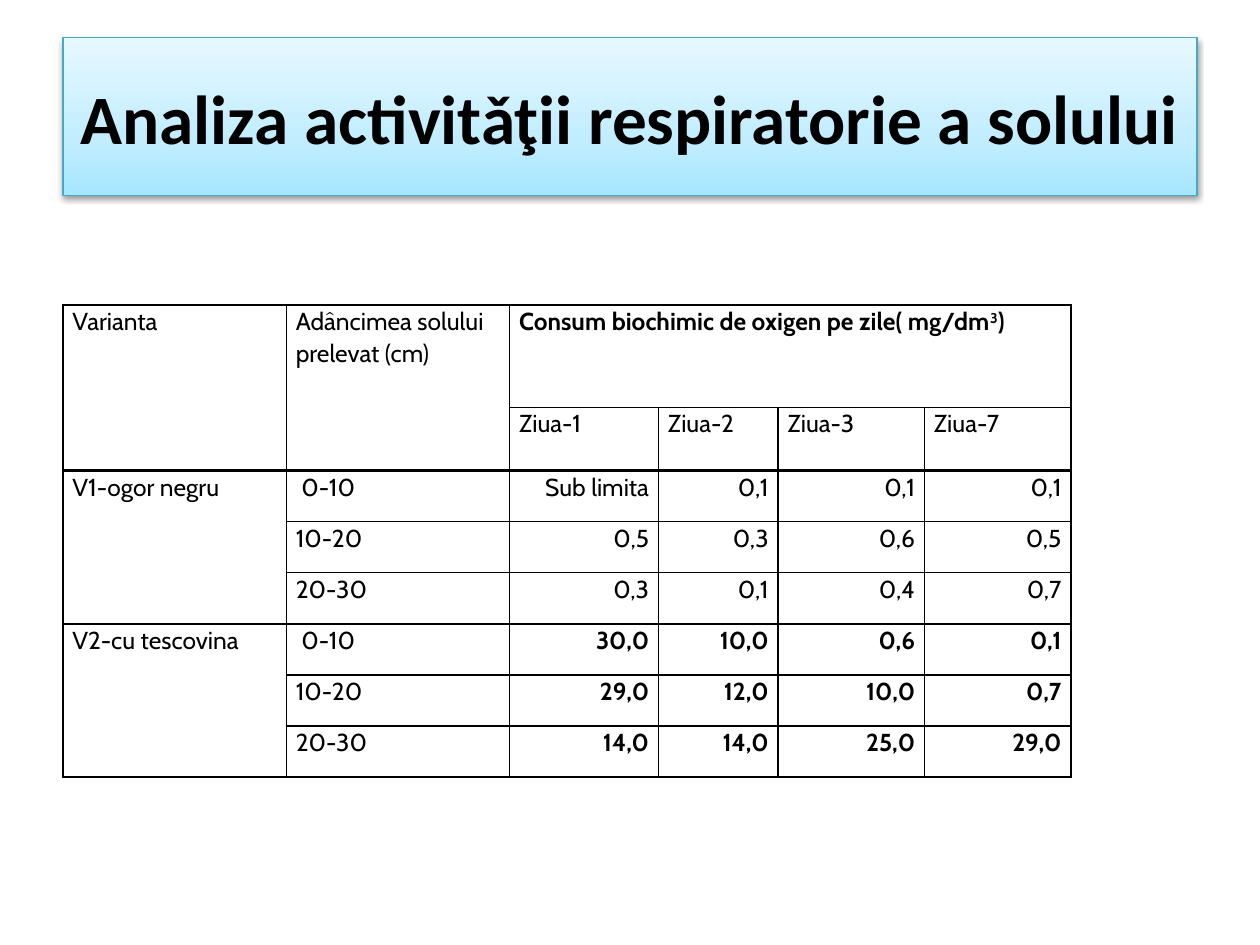
from copy import deepcopy

from lxml import etree
from pptx import Presentation
from pptx.dml.color import RGBColor
from pptx.enum.text import MSO_ANCHOR, PP_ALIGN
from pptx.oxml import parse_xml
from pptx.oxml.ns import nsdecls, qn
from pptx.util import Cm, Pt

MIDDLE, TOP = MSO_ANCHOR.MIDDLE, MSO_ANCHOR.TOP
CENTER, LEFT = PP_ALIGN.CENTER, PP_ALIGN.LEFT
RIGHT, JUSTIFY = PP_ALIGN.RIGHT, PP_ALIGN.JUSTIFY

BLACK = RGBColor(0x00, 0x00, 0x00)
TEAL = RGBColor(0x46, 0xAA, 0xC5)
TITLE_GRADIENT = [
    (0, RGBColor(0xA7, 0xE6, 0xFF)),
    (0.35, RGBColor(0xC1, 0xED, 0xFF)),
    (1, RGBColor(0xE7, 0xF8, 0xFF)),
]
NO_TABLE_STYLE = "{2D5ABB26-0587-4C30-8999-92F81FD0307C}"

COLUMN_SHARES = [4.5, 4.5, 3, 2.41, 2.95, 2.95]
ROW_SHARES = [2.06, 1.27] + [1.03] * 6
DEPTHS = [" 0-10", "10-20", "20-30"]
VARIANTS = [
    ("V1-ogor negru", False, [
        ["Sub limita", "0,1", "0,1", "0,1"],
        ["0,5", "0,3", "0,6", "0,5"],
        ["0,3", "0,1", "0,4", "0,7"],
    ]),
    ("V2-cu tescovina", True, [
        ["30,0", "10,0", "0,6", "0,1"],
        ["29,0", "12,0", "10,0", "0,7"],
        ["14,0", "14,0", "25,0", "29,0"],
    ]),
]
HEADER_ROWS = 2
GROUP_STARTS = {HEADER_ROWS + i * len(DEPTHS) for i in range(len(VARIANTS) + 1)}


def add_run(paragraph, text, size, font_name, bold=False):
    """Add one black run to a paragraph and return it."""
    run = paragraph.add_run()
    run.text = text
    run.font.size = Pt(size)
    run.font.name = font_name
    run.font.bold = bold
    run.font.color.rgb = BLACK
    return run


def place_title(slide, box):
    """Turn the title placeholder into a gradient banner filling the box."""
    banner = slide.shapes.title
    banner.left, banner.top, banner.width, banner.height = box
    banner.fill.gradient()
    banner.fill.gradient_angle = 90
    first_stop = banner._element.spPr.find(".//" + qn("a:gs"))
    first_stop.addnext(deepcopy(first_stop))
    for stop, (position, color) in zip(banner.fill.gradient_stops, TITLE_GRADIENT):
        stop.position = position
        stop.color.rgb = color
    banner.line.color.rgb = TEAL
    banner.line.width = Pt(0.75)
    banner._element.spPr.append(parse_xml(
        f'<a:effectLst {nsdecls("a")}><a:outerShdw blurRad="40000" dist="20000"'
        ' dir="5400000" rotWithShape="0"><a:srgbClr val="000000">'
        '<a:alpha val="38000"/></a:srgbClr></a:outerShdw></a:effectLst>'))
    frame = banner.text_frame
    frame.word_wrap = True
    frame.vertical_anchor = MIDDLE
    heading = frame.paragraphs[0]
    heading.alignment = CENTER
    add_run(heading, "Analiza activitǎţii respiratorie a solului", 39.6, "Calibri", True)


def draw_borders(cell, top_width, bottom_width):
    """Draw the four black borders of a cell, widths in points."""
    properties = cell._tc.get_or_add_tcPr()
    widths = {"a:lnL": 1, "a:lnR": 1, "a:lnT": top_width, "a:lnB": bottom_width}
    for tag, width in widths.items():
        border = etree.SubElement(properties, qn(tag), w=str(Pt(width)))
        solid = etree.SubElement(border, qn("a:solidFill"))
        etree.SubElement(solid, qn("a:srgbClr"), val=str(BLACK))


def fill_cell(table, row, column, text, alignment=JUSTIFY, bold=False):
    """Format one cell, write its text and return its paragraph."""
    cell = table.cell(row, column)
    next_row = row + (cell.span_height if cell.is_merge_origin else 1)
    draw_borders(cell, 1.5 if row in GROUP_STARTS else 1,
                 1.5 if next_row in GROUP_STARTS else 1)
    cell.fill.background()
    cell.margin_left = cell.margin_right = Cm(0.19)
    cell.margin_top = cell.margin_bottom = 0
    cell.vertical_anchor = TOP
    paragraph = cell.text_frame.paragraphs[0]
    paragraph.alignment = alignment
    paragraph.line_spacing = 1.06
    add_run(paragraph, text, 14, "Cabin", bold)
    return paragraph


def fill_header(table):
    """Write the two header rows with their merged cells."""
    for column in range(2):
        table.cell(0, column).merge(table.cell(1, column))
    table.cell(0, 2).merge(table.cell(0, 5))
    fill_cell(table, 0, 0, "Varianta")
    fill_cell(table, 0, 1, "Adâncimea solului prelevat (cm)", LEFT)
    consumption = fill_cell(
        table, 0, 2, "Consum biochimic de oxigen pe zile( mg/dm", bold=True)
    exponent = add_run(consumption, "3", 14, "Cabin", True)
    exponent.font._element.set("baseline", "30000")
    add_run(consumption, ")", 14, "Cabin", True)
    for column, day in enumerate([1, 2, 3, 7], start=2):
        fill_cell(table, 1, column, f"Ziua-{day}")


def fill_variant(table, first_row, variant, bold, readings):
    """Write one soil variant with a row for each depth."""
    table.cell(first_row, 0).merge(table.cell(first_row + len(DEPTHS) - 1, 0))
    fill_cell(table, first_row, 0, variant)
    for row, (depth, values) in enumerate(zip(DEPTHS, readings), start=first_row):
        fill_cell(table, row, 1, depth)
        for column, value in enumerate(values, start=2):
            fill_cell(table, row, column, value, RIGHT, bold)


def place_oxygen_table(slide, box):
    """Build the oxygen consumption table inside the box."""
    width, height = box[2:]
    table = slide.shapes.add_table(len(ROW_SHARES), len(COLUMN_SHARES), *box).table
    table.first_row = table.horz_banding = False
    table._tbl.tblPr.find(qn("a:tableStyleId")).text = NO_TABLE_STYLE
    for column, share in zip(table.columns, COLUMN_SHARES):
        column.width = int(width * share / sum(COLUMN_SHARES))
    for row, share in zip(table.rows, ROW_SHARES):
        row.height = int(height * share / sum(ROW_SHARES))
    fill_header(table)
    for index, (variant, bold, readings) in enumerate(VARIANTS):
        first_row = HEADER_ROWS + index * len(DEPTHS)
        fill_variant(table, first_row, variant, bold, readings)


def main():
    """Build the slide and save it."""
    deck = Presentation()
    deck.slide_width, deck.slide_height = Cm(25.4), Cm(19.05)
    slide = deck.slides.add_slide(deck.slide_layouts[5])
    place_title(slide, (Cm(1.27), Cm(0.76), Cm(22.86), Cm(3.18)))
    place_oxygen_table(slide, (Cm(1.27), Cm(6.15), Cm(20.32), Cm(9.51)))
    deck.save("out.pptx")


if __name__ == "__main__":
    main()
